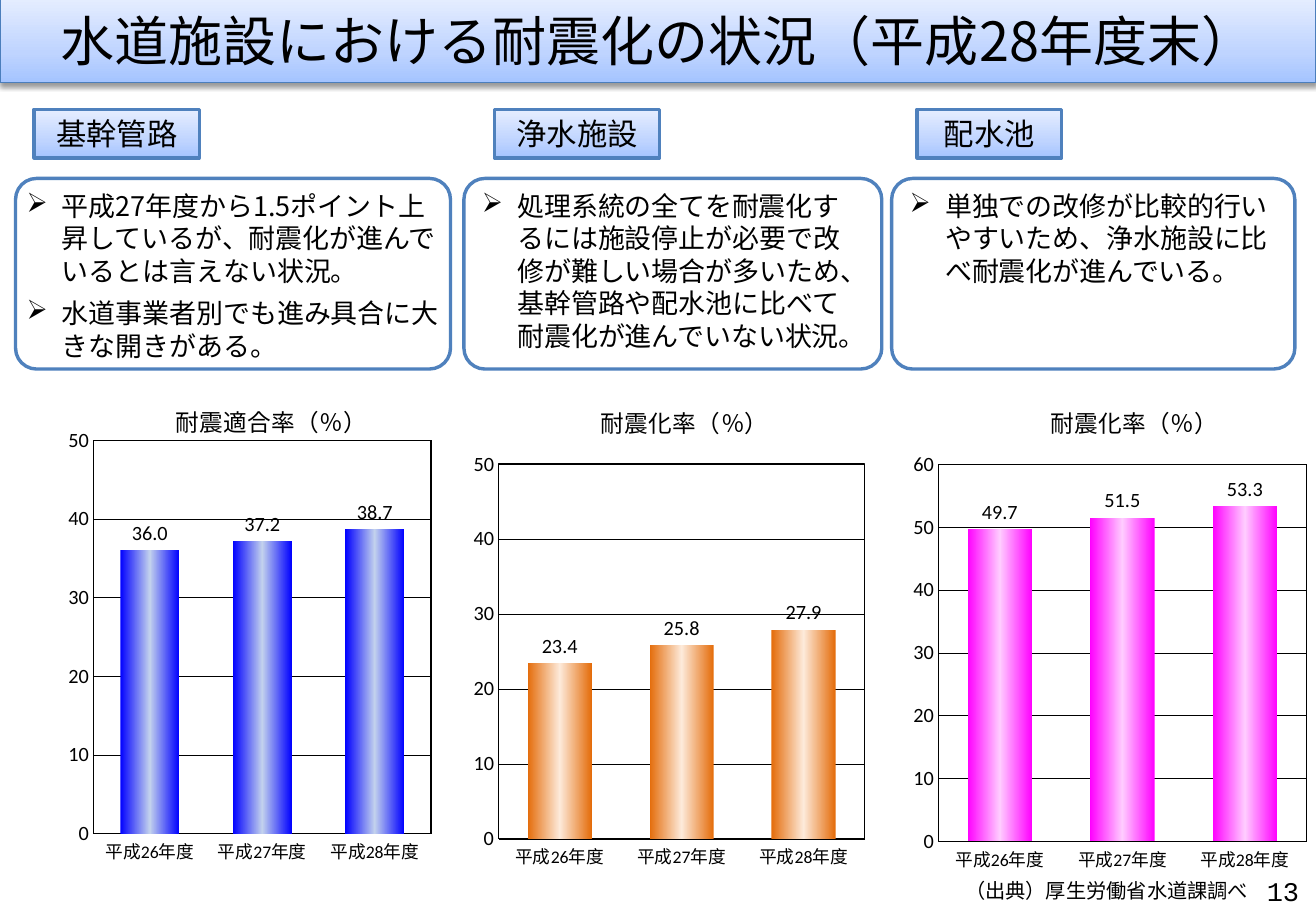
from copy import deepcopy

from pptx import Presentation
from pptx.chart.data import CategoryChartData
from pptx.dml.color import RGBColor
from pptx.enum.chart import XL_CHART_TYPE, XL_LABEL_POSITION, XL_TICK_MARK
from pptx.enum.dml import MSO_LINE
from pptx.enum.shapes import MSO_SHAPE
from pptx.enum.text import MSO_ANCHOR, PP_ALIGN
from pptx.oxml import parse_xml
from pptx.oxml.ns import nsdecls, qn
from pptx.util import Pt

COLUMN_CHART = XL_CHART_TYPE.COLUMN_CLUSTERED
OUTSIDE = XL_LABEL_POSITION.OUTSIDE_END
NO_TICK = XL_TICK_MARK.NONE
DOTTED = MSO_LINE.ROUND_DOT
RECTANGLE, ROUNDED = MSO_SHAPE.RECTANGLE, MSO_SHAPE.ROUNDED_RECTANGLE
MIDDLE, TOP = MSO_ANCHOR.MIDDLE, MSO_ANCHOR.TOP
LEFT, CENTER, RIGHT = PP_ALIGN.LEFT, PP_ALIGN.CENTER, PP_ALIGN.RIGHT

JAPANESE = "Noto Sans CJK JP"
BLACK, BLUE = "000000", "4F81BD"
HEADER_STOPS = [(0, "A4C4FF"), (0.35, "BFD4FF"), (1, "E6EEFF")]
YEARS = ["平成26年度", "平成27年度", "平成28年度"]
COLUMNS = [
    {"tag": "基幹管路", "tag_box": (20.2, 64.8, 98, 28.8),
     "notes": ["平成27年度から1.5ポイント上昇しているが、耐震化が進んでいるとは言えない状況。",
               "水道事業者別でも進み具合に大きな開きがある。"],
     "notes_box": (9.2, 105.8, 257.8, 113), "inset": 2.9,
     "title": "耐震適合率（％）", "title_at": (0.38, 0.035),
     "chart_box": (0, 224.6, 267, 296.6), "plot": (0.208, 0.123, 0.749, 0.786),
     "values": [36.0, 37.2, 38.7], "maximum": 50, "colors": ("0000FF", "C2D1ED")},
    {"tag": "浄水施設", "tag_box": (293, 64.8, 98, 28.8),
     "notes": ["処理系統の全てを耐震化するには施設停止が必要で改修が難しい場合が多いため、"
               "基幹管路や配水池に比べて耐震化が進んでいない状況。"],
     "notes_box": (275, 105.8, 247.7, 113), "inset": 7.2,
     "title": "耐震化率（％）", "title_at": (0.39, 0.04),
     "chart_box": (248.4, 224, 270, 297.4), "plot": (0.175, 0.172, 0.803, 0.747),
     "values": [23.4, 25.8, 27.9], "maximum": 50, "colors": ("E46C0A", "FDEADA")},
    {"tag": "配水池", "tag_box": (543.6, 64.8, 85.7, 28.8),
     "notes": ["単独での改修が比較的行いやすいため、浄水施設に比べ耐震化が進んでいる。"],
     "notes_box": (528.5, 105.8, 239, 113), "inset": 7.2,
     "title": "耐震化率（％）", "title_at": (0.41, 0.04),
     "chart_box": (509, 224, 270.7, 298), "plot": (0.175, 0.172, 0.805, 0.75),
     "values": [49.7, 51.5, 53.3], "maximum": 60, "colors": ("FF00FF", "FFCCFF")},
]


def color(code):
    """Turn a hex string into a colour."""
    return RGBColor.from_string(code)


def points(box):
    """Turn the numbers of a box into lengths."""
    return [Pt(number) for number in box]


def set_gradient(fill, element, stops, angle):
    """Give a fill a linear gradient of three stops."""
    fill.gradient()
    fill.gradient_angle = angle
    stop_list = next(element.iter(qn("a:gsLst")))
    stop_list.append(deepcopy(stop_list[0]))
    for stop, (position, code) in zip(fill.gradient_stops, stops):
        stop.position = position
        stop.color.rgb = color(code)


def style_line(line, code, width):
    """Set the colour and width of a line."""
    line.color.rgb = color(code)
    line.width = Pt(width)


def set_font(para, size, name):
    """Set the type of a whole paragraph."""
    para.font.size = Pt(size)
    para.font.name = name
    para.font.color.rgb = color(BLACK)
    para.font._element.append(parse_xml(f'<a:ea {nsdecls("a")} typeface="{JAPANESE}"/>'))


def write(shape, text, size, name, align, inset=0, wrap=True):
    """Write one line of text, centred in height."""
    frame = shape.text_frame
    frame.word_wrap = wrap
    frame.vertical_anchor = MIDDLE
    frame.margin_left = frame.margin_right = Pt(inset)
    frame.margin_top = frame.margin_bottom = 0
    para = frame.paragraphs[0]
    para.text = text
    para.alignment = align
    set_font(para, size, name)


def add_panel(page, box, kind, line_code, line_width):
    """Add an outlined shape without shadow."""
    panel = page.shapes.add_shape(kind, *points(box))
    panel.shadow.inherit = False
    style_line(panel.line, line_code, line_width)
    return panel


def add_heading(page, box):
    """Add the title band with its soft shadow."""
    band = add_panel(page, box, RECTANGLE, "4B7EBC", 0.75)
    set_gradient(band.fill, band._element, HEADER_STOPS, 90)
    effects = band._element.spPr.find(qn("a:effectLst"))
    effects.append(parse_xml(
        f'<a:outerShdw {nsdecls("a")} blurRad="{Pt(3.1)}" dist="{Pt(1.6)}" dir="5400000" '
        f'rotWithShape="0"><a:srgbClr val="{BLACK}"><a:alpha val="38000"/></a:srgbClr></a:outerShdw>'))
    write(band, "水道施設における耐震化の状況（平成28年度末）", 32, JAPANESE, CENTER, 7.2, False)


def add_tag(page, box, text):
    """Add the label of a facility."""
    tag = add_panel(page, box, RECTANGLE, BLUE, 2)
    set_gradient(tag.fill, tag._element, HEADER_STOPS, 90)
    write(tag, text, 18, "Calibri", CENTER, 7.2)


def add_notes(page, box, notes, inset):
    """Add the rounded box with arrow bullets."""
    panel = add_panel(page, box, ROUNDED, BLUE, 2)
    panel.adjustments[0] = 0.11
    panel.fill.solid()
    panel.fill.fore_color.rgb = color("FFFFFF")
    frame = panel.text_frame
    frame.word_wrap = True
    frame.vertical_anchor = TOP
    frame.margin_left = frame.margin_right = Pt(inset)
    frame.margin_top = frame.margin_bottom = Pt(3)
    for index, note in enumerate(notes):
        para = frame.add_paragraph() if index else frame.paragraphs[0]
        para.text = note
        para.alignment = LEFT
        para.line_spacing = Pt(19.2)
        if index:
            para.space_before = Pt(6)
        settings = para._p.get_or_add_pPr()
        settings.set("marL", str(Pt(21)))
        settings.set("indent", str(Pt(-21)))
        settings.append(parse_xml(f'<a:buChar {nsdecls("a")} char="➢"/>'))
        set_font(para, 16, JAPANESE)


def set_layout(parent, index, place, target=""):
    """Fix the place of a chart part as shares of the chart."""
    for old in parent.findall(qn("c:layout")):
        parent.remove(old)
    modes = '<c:xMode val="edge"/><c:yMode val="edge"/>'
    shares = "".join(f'<c:{key} val="{share}"/>' for key, share in zip("xywh", place))
    parent.insert(index, parse_xml(
        f'<c:layout {nsdecls("c")}><c:manualLayout>{target}{modes}{shares}'
        '</c:manualLayout></c:layout>'))


def add_rate_chart(page, column):
    """Add the column chart of yearly rates."""
    data = CategoryChartData(number_format="0.0")
    data.categories = YEARS
    data.add_series(column["title"], column["values"])
    chart = page.shapes.add_chart(COLUMN_CHART, *points(column["chart_box"]), data).chart
    chart.has_legend = False
    chart.font.name = "Calibri"
    chart.font.size = Pt(10.5)
    chart.font.color.rgb = color(BLACK)

    chart.has_title = True
    para = chart.chart_title.text_frame.paragraphs[0]
    para.text = column["title"]
    para.font.bold = False
    set_font(para, 14, "Calibri")
    set_layout(chart.chart_title._element, 1, column["title_at"])

    for axis in (chart.category_axis, chart.value_axis):
        axis.major_tick_mark = axis.minor_tick_mark = NO_TICK
        style_line(axis.format.line, BLACK, 0.75)
    scale = chart.value_axis
    scale.minimum_scale, scale.maximum_scale, scale.major_unit = 0, column["maximum"], 10
    scale.tick_labels.font.size = Pt(12)
    scale.tick_labels.number_format = "0"
    scale.tick_labels.number_format_is_linked = False
    style_line(scale.major_gridlines.format.line, BLACK, 0.25)
    scale.major_gridlines.format.line.dash_style = DOTTED

    plot = chart.plots[0]
    plot.gap_width = 90
    plot.vary_by_categories = False
    plot.has_data_labels = True
    labels = plot.data_labels
    labels.show_value = True
    labels.position = OUTSIDE
    labels.number_format = "0.0"
    labels.number_format_is_linked = False
    labels.font.size = Pt(12)
    series = plot.series[0]
    edge, middle = column["colors"]
    set_gradient(series.format.fill, series._element, [(0, edge), (0.5, middle), (1, edge)], 0)

    area = chart._chartSpace.chart.plotArea
    set_layout(area, 0, column["plot"], '<c:layoutTarget val="inner"/>')
    area.append(parse_xml(
        f'<c:spPr {nsdecls("c", "a")}><a:noFill/><a:ln w="{Pt(0.75)}"><a:solidFill>'
        f'<a:srgbClr val="{BLACK}"/></a:solidFill></a:ln></c:spPr>'))


def add_footer(page, box):
    """Add the data credit and the page number."""
    left, top, width, height = box
    parts = [("（出典）厚生労働省水道課調べ", 12, "Arial", width - 36),
             ("13", 16, "Courier New", width - 6)]
    for text, size, name, reach in parts:
        label = page.shapes.add_textbox(*points((left, top, reach, height)))
        write(label, text, size, name, RIGHT)


def main():
    """Build the slide and save it."""
    deck = Presentation()
    deck.slide_width, deck.slide_height = Pt(780), Pt(540)
    page = deck.slides.add_slide(deck.slide_layouts[6])
    add_heading(page, (0, -2, 780, 51))
    for column in COLUMNS:
        add_tag(page, column["tag_box"], column["tag"])
        add_notes(page, column["notes_box"], column["notes"], column["inset"])
        add_rate_chart(page, column)
    add_footer(page, (560, 514, 216, 28))
    deck.save("out.pptx")


if __name__ == "__main__":
    main()
